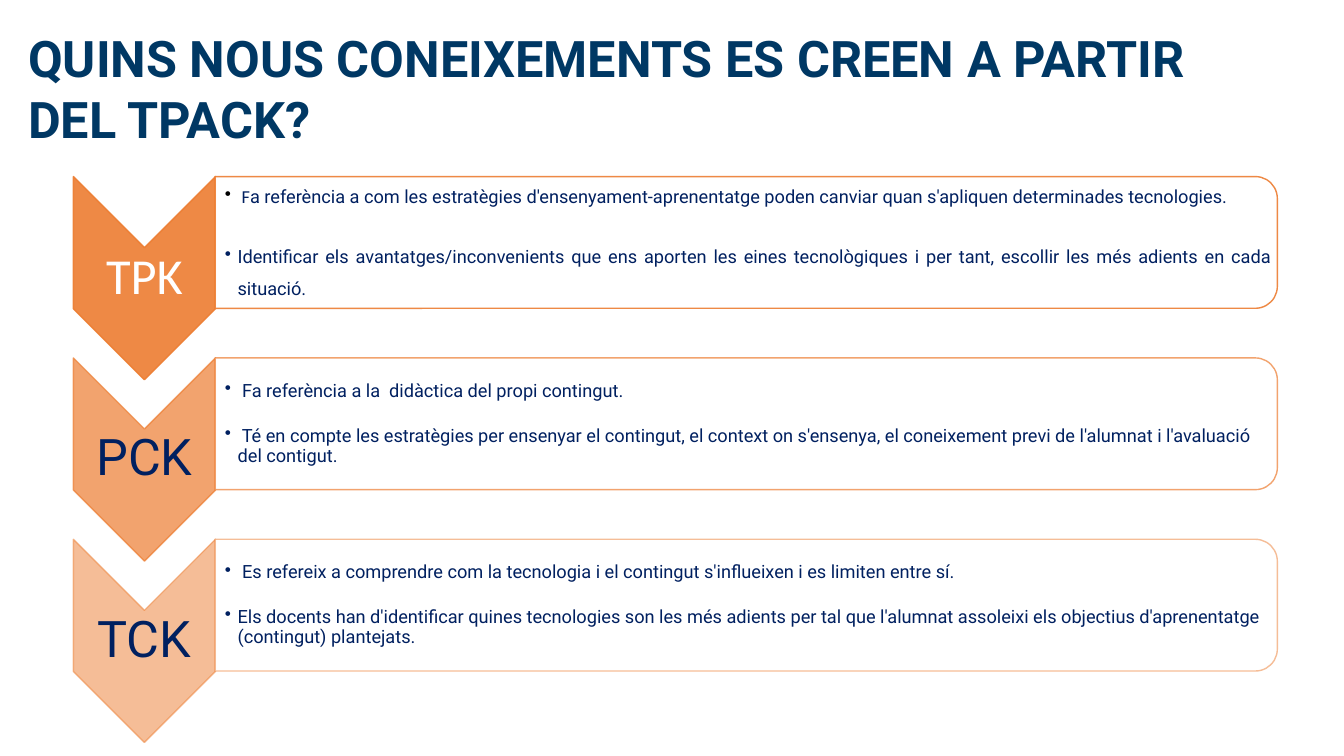
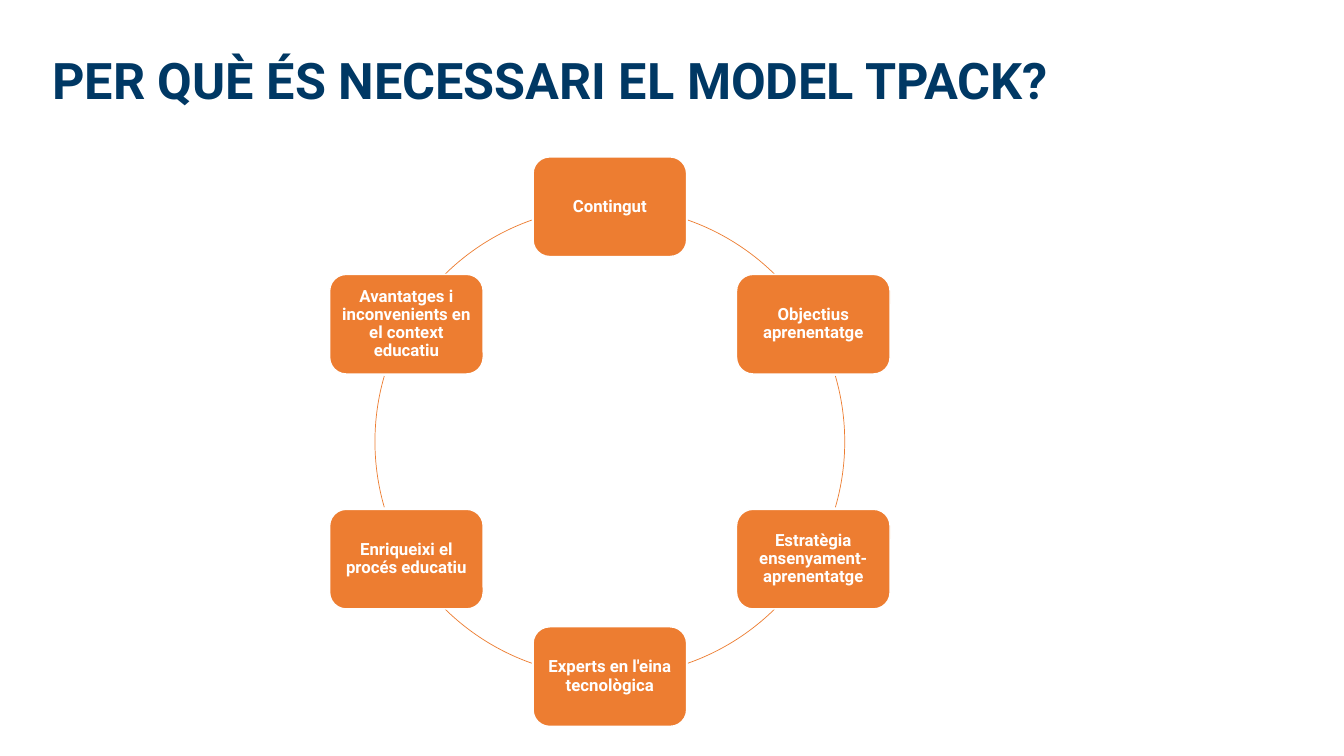
"""Build two slides on the TPACK model: a chevron list and a ring of ideas."""
from math import cos, radians, sin

from lxml import etree
from pptx import Presentation
from pptx.dml.color import RGBColor
from pptx.enum import shapes, text
from pptx.oxml.ns import qn
from pptx.util import Cm, Pt

ORANGE, WHITE, NAVY, BLACK, TITLE_BLUE = "ED7D31", "FFFFFF", "002060", "000000", "003864"
BODY_FONT, LABEL_FONT = "Roboto", "Calibri"
LEFT, CENTER, JUSTIFY = text.PP_ALIGN.LEFT, text.PP_ALIGN.CENTER, text.PP_ALIGN.JUSTIFY
TOP, MIDDLE = text.MSO_ANCHOR.TOP, text.MSO_ANCHOR.MIDDLE

KNOWLEDGE_TITLE = "QUINS NOUS CONEIXEMENTS ES CREEN A PARTIR DEL TPACK?"
KNOWLEDGE = [
    {"label": "TPK", "font": LABEL_FONT, "color": WHITE, "opacity": 90,
     "align": JUSTIFY, "spacings": (1.0, 1.5), "gap": 19,
     "bullets": [
         [(" ", LABEL_FONT, BLACK), ("F", LABEL_FONT, NAVY),
          ("a referència a com les estratègies d'ensenyament-aprenentatge poden canviar "
           "quan s'apliquen determinades tecnologies.", BODY_FONT, NAVY)],
         [("Identificar els avantatges/inconvenients que ens aporten les eines tecnològiques "
           "i per tant, escollir les més adients en cada situació.", BODY_FONT, NAVY)]]},
    {"label": "PCK", "font": BODY_FONT, "color": NAVY, "opacity": 70,
     "align": LEFT, "spacings": (0.9, 0.9), "gap": 18,
     "bullets": [
         [(" Fa referència a la  didàctica del propi contingut.", BODY_FONT, NAVY)],
         [(" Té en compte les estratègies per ensenyar el contingut, el context on s'ensenya, "
           "el coneixement previ de l'alumnat i l'avaluació del contigut.", BODY_FONT, NAVY)]]},
    {"label": "TCK", "font": BODY_FONT, "color": NAVY, "opacity": 50,
     "align": LEFT, "spacings": (0.9, 0.9), "gap": 18,
     "bullets": [
         [(" Es refereix a comprendre com la tecnologia i el contingut s'influeixen i es "
           "limiten entre sí.", BODY_FONT, NAVY)],
         [("Els docents han d'identificar quines tecnologies son les més adients per tal que "
           "l'alumnat assoleixi els objectius d'aprenentatge (contingut) plantejats.",
           BODY_FONT, NAVY)]]},
]
ROW_TOP, ROW_PITCH = 4.45, 4.57
CHEVRON_LEFT, CHEVRON_WIDTH, CHEVRON_HEIGHT = 1.85, 3.58, 5.12
PANEL_LEFT, PANEL_WIDTH, PANEL_HEIGHT = 5.42, 26.77, 3.32

REASONS_TITLE = "PER QUÈ ÉS NECESSARI EL MODEL TPACK?"
REASONS = ["Contingut", "Objectius aprenentatge", "Estratègia ensenyament-aprenentatge",
           "Experts en l'eina tecnològica", "Enriqueixi el procés educatiu",
           "Avantatges i inconvenients en el context educatiu"]
RING_X, RING_Y, RING_RADIUS = 15.37, 11.13, 5.92
REASON_WIDTH, REASON_HEIGHT = 3.87, 2.51
ARCS = [(289.4, 314.5), (343.8, 16.2), (45.5, 70.6),
        (109.4, 134.5), (163.8, 196.2), (225.5, 250.6)]


def rgb(value):
    """Turn a hex string into a colour."""
    return RGBColor.from_string(value)


def set_values(target, values):
    """Set each named attribute on the target."""
    for name, value in values.items():
        setattr(target, name, value)


def set_frame(frame, anchor, insets):
    """Set wrapping, anchor and insets (left, top, right, bottom) of a text frame."""
    left, top, right, bottom = (Cm(inset) for inset in insets)
    set_values(frame, {"word_wrap": True, "auto_size": text.MSO_AUTO_SIZE.NONE,
                       "vertical_anchor": anchor, "margin_left": left, "margin_top": top,
                       "margin_right": right, "margin_bottom": bottom})


def add_run(paragraph, content, font, size, color, bold=False):
    """Append one formatted run to a paragraph."""
    run = paragraph.add_run()
    run.text = content
    set_values(run.font, {"name": font, "size": Pt(size), "bold": bold})
    run.font.color.rgb = rgb(color)


def add_line(frame, content, font, size, color, bold=False, align=CENTER, spacing=0.9):
    """Write a one-paragraph text into a frame."""
    paragraph = frame.paragraphs[0]
    set_values(paragraph, {"alignment": align, "line_spacing": spacing})
    add_run(paragraph, content, font, size, color, bold)


def add_titled_slide(presentation, title, box, spacing):
    """Add a title-only slide with its title placed and formatted."""
    slide = presentation.slides.add_slide(presentation.slide_layouts[5])
    shape = slide.shapes.title
    set_values(shape, dict(zip(("left", "top", "width", "height"), map(Cm, box))))
    set_frame(shape.text_frame, TOP, (0.25, 0.13, 0.25, 0.13))
    add_line(shape.text_frame, title, BODY_FONT, 36, TITLE_BLUE, True, LEFT, spacing)
    return slide


def add_shape(slide, kind, box, fill, line, weight=1):
    """Add a preset shape without shadow; no fill when fill is None."""
    shape = slide.shapes.add_shape(kind, *map(Cm, box))
    shape.shadow.inherit = False
    if fill:
        shape.fill.solid()
        shape.fill.fore_color.rgb = rgb(fill)
    else:
        shape.fill.background()
    shape.line.color.rgb = rgb(line)
    shape.line.width = Pt(weight)
    return shape


def add_turned_shape(slide, kind, box, fill, opacities):
    """Add a shape turned clockwise to fill the box, with fill and line opacity."""
    left, top, width, height = box
    shift = (width - height) / 2
    shape = add_shape(slide, kind, (left + shift, top - shift, height, width), fill, ORANGE)
    shape.rotation = 90
    for color, opacity in zip(shape.element.spPr.iter(qn("a:srgbClr")), opacities):
        etree.SubElement(color, qn("a:alpha"), val=str(opacity * 1000))


def add_text_box(slide, box, insets):
    """Add a wrapped, vertically centred text box and return its frame."""
    frame = slide.shapes.add_textbox(*map(Cm, box)).text_frame
    set_frame(frame, MIDDLE, insets)
    return frame


def add_bullets(frame, row):
    """Write the bullets of a row into a frame."""
    for index, (runs, spacing) in enumerate(zip(row["bullets"], row["spacings"])):
        paragraph = frame.add_paragraph() if index else frame.paragraphs[0]
        set_values(paragraph, {"alignment": row["align"], "line_spacing": spacing,
                               "space_before": Pt(row["gap"] if index else 0)})
        properties = paragraph._p.get_or_add_pPr()
        properties.set("marL", str(Cm(0.32)))
        properties.set("indent", str(-Cm(0.32)))
        etree.SubElement(properties, qn("a:buChar"), char="•")
        for content, font, color in runs:
            add_run(paragraph, content, font, 13, color)


def build_knowledge(presentation):
    """Build the slide with a chevron and a panel per kind of knowledge."""
    slide = add_titled_slide(presentation, KNOWLEDGE_TITLE, (0.46, 0.56, 32.05, 3.33), 1.0)
    for index, row in enumerate(KNOWLEDGE):
        top = ROW_TOP + index * ROW_PITCH
        add_turned_shape(slide, shapes.MSO_SHAPE.CHEVRON,
                         (CHEVRON_LEFT, top, CHEVRON_WIDTH, CHEVRON_HEIGHT),
                         ORANGE, (row["opacity"], row["opacity"]))
        label = add_text_box(slide, (CHEVRON_LEFT, top + 1.8, CHEVRON_WIDTH, 1.52), [0.08] * 4)
        add_line(label, row["label"], row["font"], 36, row["color"])
        add_turned_shape(slide, shapes.MSO_SHAPE.ROUND_2_SAME_RECTANGLE,
                         (PANEL_LEFT, top, PANEL_WIDTH, PANEL_HEIGHT),
                         WHITE, (90, row["opacity"]))
        panel = add_text_box(slide, (PANEL_LEFT, top + 0.16, PANEL_WIDTH - 0.15, 3),
                             (0.25, 0.03, 0.03, 0.03))
        add_bullets(panel, row)


def build_reasons(presentation):
    """Build the slide with the reasons placed evenly on a ring."""
    slide = add_titled_slide(presentation, REASONS_TITLE, (1.07, 1.27, 28.02, 1.8), 0.9)
    ring = (RING_X - RING_RADIUS, RING_Y - RING_RADIUS, 2 * RING_RADIUS, 2 * RING_RADIUS)
    for angles in ARCS:
        arc = add_shape(slide, shapes.MSO_SHAPE.ARC, ring, None, ORANGE, 0.5)
        for index, angle in enumerate(angles):
            arc.adjustments[index] = angle * 0.6
    for index, reason in enumerate(REASONS):
        angle = radians(index * 360 / len(REASONS) - 90)
        left = RING_X + RING_RADIUS * cos(angle) - REASON_WIDTH / 2
        top = RING_Y + RING_RADIUS * sin(angle) - REASON_HEIGHT / 2
        shape = add_shape(slide, shapes.MSO_SHAPE.ROUNDED_RECTANGLE,
                          (left, top, REASON_WIDTH, REASON_HEIGHT), ORANGE, WHITE)
        set_frame(shape.text_frame, MIDDLE, [0.13] * 4)
        add_line(shape.text_frame, reason, BODY_FONT, 12, WHITE, True)


def main():
    """Build and save the presentation."""
    presentation = Presentation()
    set_values(presentation, {"slide_width": Cm(33.87), "slide_height": Cm(19.05)})
    build_knowledge(presentation)
    build_reasons(presentation)
    presentation.save("out.pptx")


if __name__ == "__main__":
    main()
